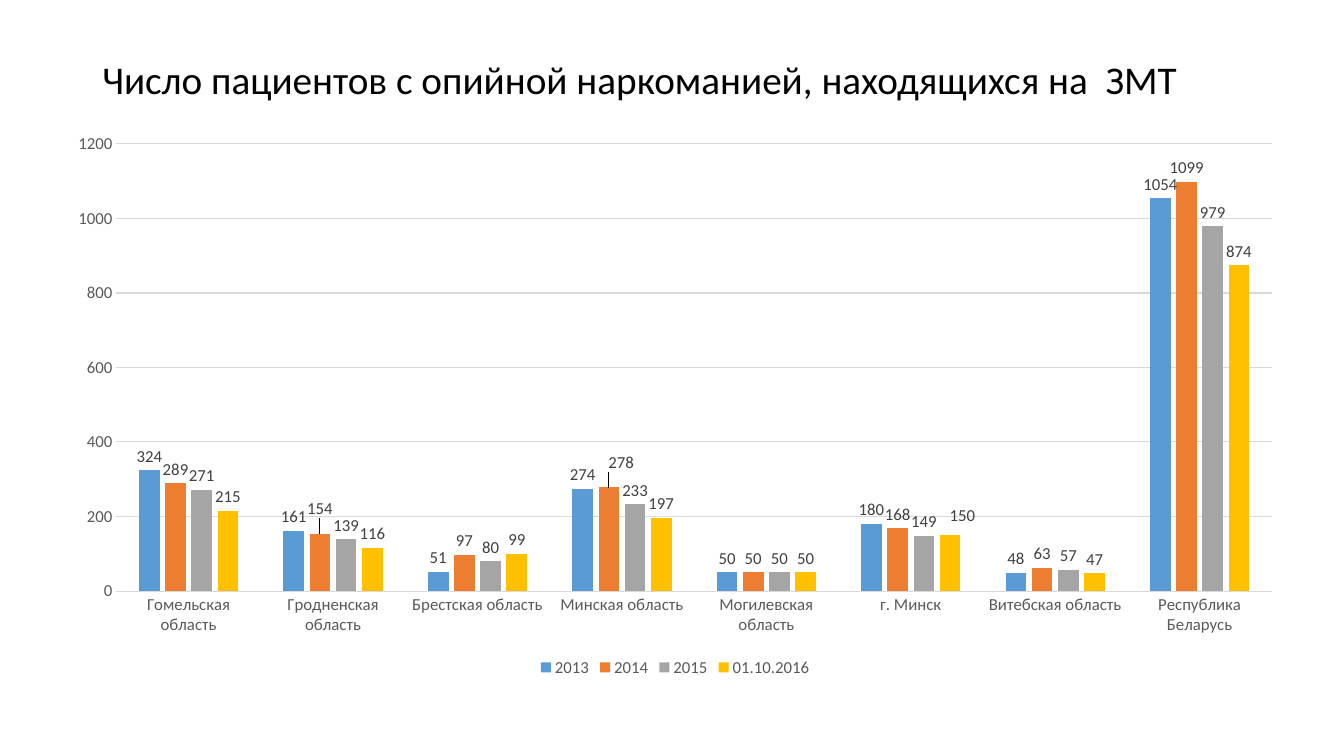
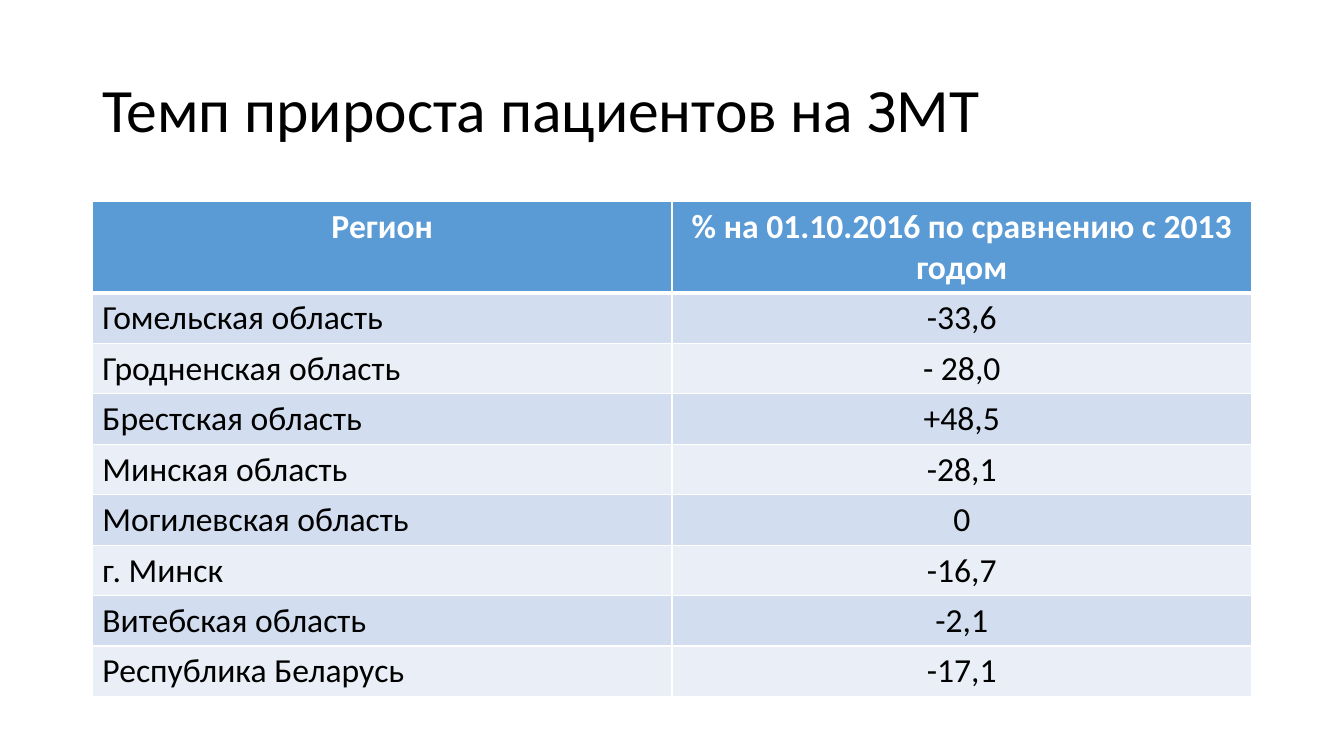
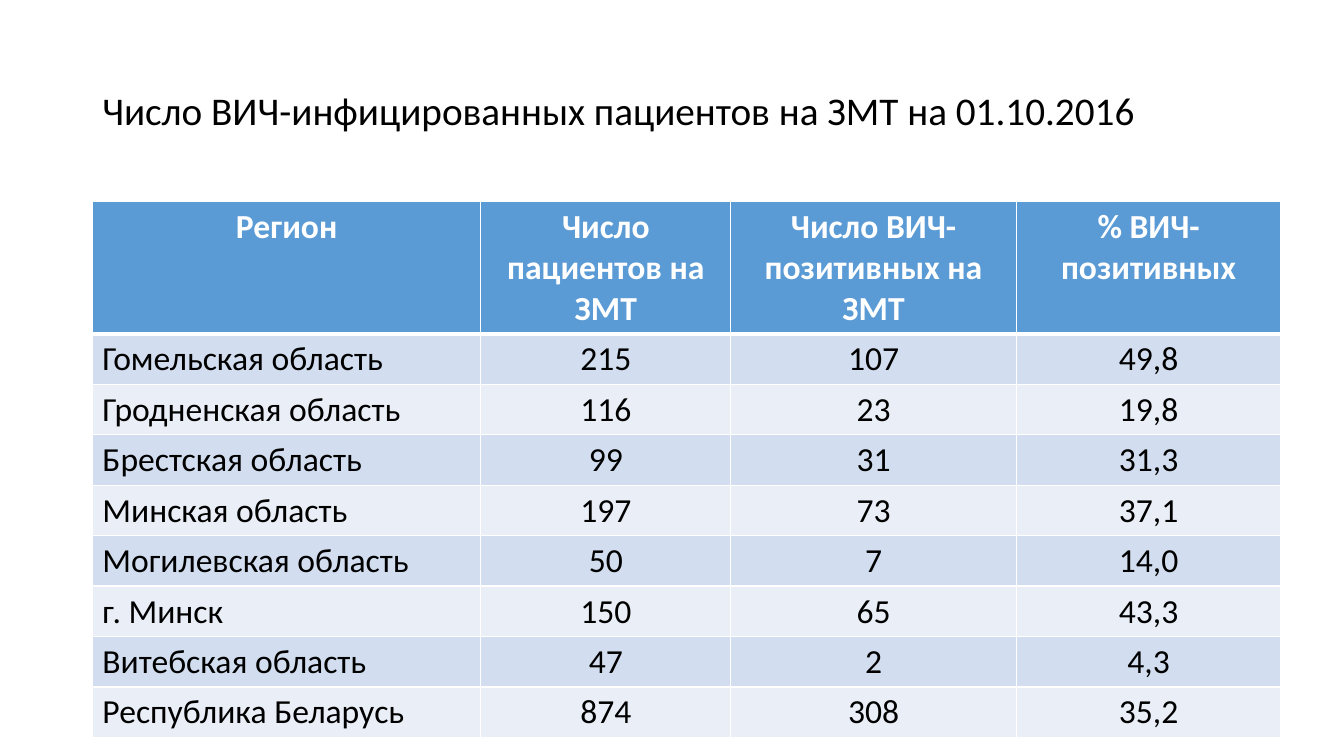
from lxml import etree
from pptx import Presentation
from pptx import util as u
from pptx.chart.data import CategoryChartData
from pptx.dml.color import RGBColor
from pptx.enum import chart as ch, text
from pptx.oxml.ns import qn

PX = 9525
FONT = "Calibri"
BLACK, WHITE, BLUE = "000000", "FFFFFF", "5B9BD5"
BANDS = ("D2DEEF", "EAEFF7")
AXIS_TEXT, LABEL_TEXT, GRID = "595959", "404040", "D9D9D9"
REGIONS = ["Гомельская область", "Гродненская область", "Брестская область",
           "Минская область", "Могилевская область", "г. Минск",
           "Витебская область", "Республика Беларусь"]
SERIES = [
    ("2013", BLUE, (324, 161, 51, 274, 50, 180, 48, 1054), {}),
    ("2014", "ED7D31", (289, 154, 97, 278, 50, 168, 63, 1099),
     {1: (0, -0.02), 3: (0.01, -0.02)}),
    ("2015", "A5A5A5", (271, 139, 80, 233, 50, 149, 57, 979), {}),
    ("01.10.2016", "FFC000", (215, 116, 99, 197, 50, 150, 47, 874),
     {5: (0.01, -0.01)}),
]
GROWTH = ["-33,6", "- 28,0", "+48,5", "-28,1", "0", "-16,7", "-2,1", "-17,1"]
HIV_POSITIVE = ["107", "23", "31", "73", "7", "65", "2", "308"]
HIV_SHARE = ["49,8", "19,8", "31,3", "37,1", "14,0", "43,3", "4,3", "35,2"]


def px(n):
    """Turn px into EMU."""
    return u.Emu(n * PX)


def rgb(color):
    """Turn a hex string into a colour."""
    return RGBColor.from_string(color)


def style_font(font, size, color, bold=False):
    """Set typeface, size, colour and weight."""
    font.name, font.size, font.bold = FONT, u.Pt(size), bold
    font.color.rgb = rgb(color)


def add_title(s, box, title, size):
    """Place the slide title in its box."""
    tf = s.shapes.add_textbox(*map(px, box)).text_frame
    tf.word_wrap = True
    tf.vertical_anchor = text.MSO_ANCHOR.MIDDLE
    p = tf.paragraphs[0]
    p.line_spacing = 0.9
    r = p.add_run()
    r.text = title
    style_font(r.font, size, BLACK)


def shift_label(series, index, dx, dy):
    """Move one data label by fractions of the chart size."""
    label = series.points[index].data_label
    style_font(label.font, 12, LABEL_TEXT)
    label.position = ch.XL_LABEL_POSITION.OUTSIDE_END
    idx = series._element.xpath(f"c:dLbls/c:dLbl/c:idx[@val='{index}']")[0]
    layout = etree.Element(qn("c:layout"))
    manual = etree.SubElement(layout, qn("c:manualLayout"))
    for tag, val in (("c:x", dx), ("c:y", dy)):
        etree.SubElement(manual, qn(tag), val=str(val))
    idx.addnext(layout)


def add_patient_chart(s, box):
    """Place the clustered columns of patients by region and year."""
    data = CategoryChartData()
    data.categories = REGIONS
    for name, _, values, _ in SERIES:
        data.add_series(name, values)
    chart = s.shapes.add_chart(ch.XL_CHART_TYPE.COLUMN_CLUSTERED,
                               *map(px, box), data).chart
    style_font(chart.font, 12, AXIS_TEXT)
    chart.has_title = False
    chart.has_legend = True
    chart.legend.position = ch.XL_LEGEND_POSITION.BOTTOM
    chart.legend.include_in_layout = False
    style_font(chart.legend.font, 12, AXIS_TEXT)
    for axis in (chart.category_axis, chart.value_axis):
        axis.major_tick_mark = axis.minor_tick_mark = ch.XL_TICK_MARK.NONE
        style_font(axis.tick_labels.font, 12, AXIS_TEXT)
    chart.value_axis.format.line.fill.background()
    chart.value_axis.maximum_scale = 1200
    chart.value_axis.minimum_scale = 0
    chart.value_axis.major_unit = 200
    grid = chart.value_axis.major_gridlines
    for line in (chart.category_axis.format.line, grid.format.line):
        line.color.rgb = rgb(GRID)
        line.width = u.Pt(0.75)
    plot = chart.plots[0]
    plot.gap_width, plot.overlap = 219, -27
    plot.vary_by_categories = False
    for series, (_, color, _, shifts) in zip(plot.series, SERIES):
        series.format.fill.solid()
        series.format.fill.fore_color.rgb = rgb(color)
        labels = series.data_labels
        labels.show_value = True
        labels.position = ch.XL_LABEL_POSITION.OUTSIDE_END
        style_font(labels.font, 12, LABEL_TEXT)
        for index, (dx, dy) in shifts.items():
            shift_label(series, index, dx, dy)


def set_borders(cell, top, bottom):
    """Draw white borders around a cell, widths in points."""
    tcPr = cell._tc.get_or_add_tcPr()
    for side, width in (("L", 1), ("R", 1), ("T", top), ("B", bottom)):
        ln = etree.SubElement(tcPr, qn(f"a:ln{side}"), w=str(u.Pt(width)))
        fill = etree.SubElement(ln, qn("a:solidFill"))
        etree.SubElement(fill, qn("a:srgbClr"), val=WHITE)


def fill_cell(cell, value, row, col):
    """Write and style one cell by its place in the table."""
    header = row == 0
    set_borders(cell, 3 if row == 1 else 1, 3 if header else 1)
    cell.fill.solid()
    cell.fill.fore_color.rgb = rgb(BLUE if header else BANDS[(row - 1) % 2])
    p = cell.text_frame.paragraphs[0]
    centred = header or col > 0
    p.alignment = text.PP_ALIGN.CENTER if centred else text.PP_ALIGN.LEFT
    r = p.add_run()
    r.text = value
    style_font(r.font, 24, WHITE if header else BLACK, header)


def add_region_table(s, left, top, widths, header_height, headers, columns):
    """Place a banded table with one row for each region."""
    row_height = 48
    rows = [headers, *zip(REGIONS, *columns)]
    height = header_height + row_height * len(REGIONS)
    table = s.shapes.add_table(len(rows), len(widths), px(left), px(top),
                               px(sum(widths)), px(height)).table
    for col, width in enumerate(widths):
        table.columns[col].width = px(width)
    for row, values in enumerate(rows):
        table.rows[row].height = px(row_height if row else header_height)
        for col, value in enumerate(values):
            fill_cell(table.cell(row, col), value, row, col)


def main():
    """Build the three slides."""
    prs = Presentation()
    prs.slide_width, prs.slide_height = px(1280), px(720)
    patients, growth, hiv = (prs.slides.add_slide(prs.slide_layouts[6])
                             for _ in range(3))
    title_box = (88, 38, 1104, 139)

    add_title(patients, (88, 38, 1104, 79),
              "Число пациентов с опийной наркоманией, находящихся на  ЗМТ", 28)
    add_patient_chart(patients, (51, 117, 1184, 532))

    add_title(growth, title_box, "Темп прироста пациентов на ЗМТ", 44)
    add_region_table(growth, 88, 192, (552, 552), 87,
                     ("Регион", "% на 01.10.2016 по сравнению с 2013 годом"),
                     [GROWTH])

    add_title(hiv, title_box,
              "Число ВИЧ-инфицированных пациентов на ЗМТ на 01.10.2016", 28)
    add_region_table(hiv, 88, 192, (370, 238, 272, 252), 126,
                     ("Регион", "Число пациентов на ЗМТ",
                      "Число ВИЧ-позитивных на ЗМТ", "% ВИЧ-позитивных"),
                     [map(str, SERIES[-1][2]), HIV_POSITIVE, HIV_SHARE])
    prs.save("out.pptx")


if __name__ == "__main__":
    main()
